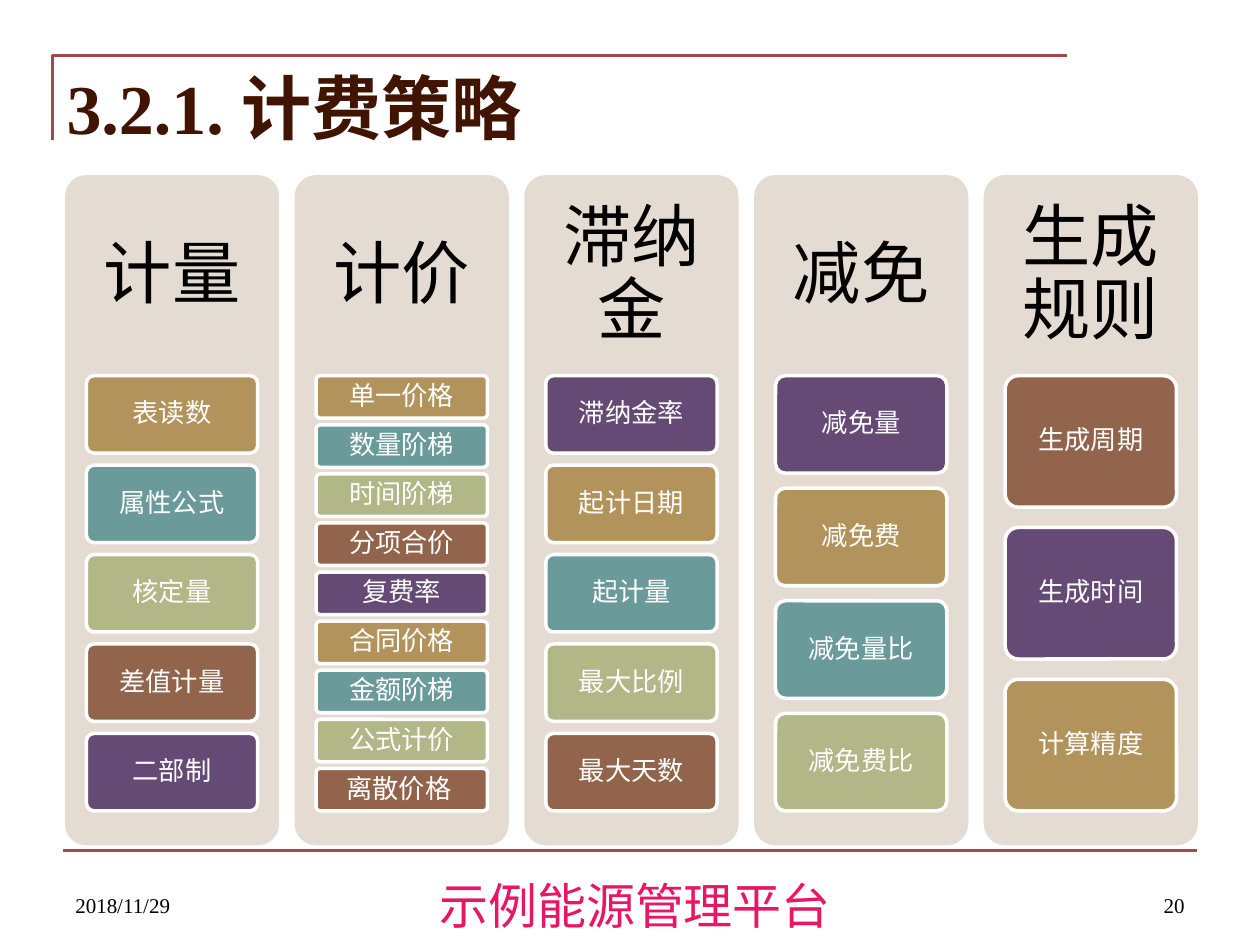
from dataclasses import dataclass
from itertools import cycle
from typing import Iterator

from lxml.etree import SubElement
from pptx import Presentation
from pptx.dml.color import RGBColor
from pptx.enum.shapes import MSO_CONNECTOR, MSO_SHAPE
from pptx.enum.text import MSO_ANCHOR, PP_ALIGN
from pptx.oxml.ns import qn
from pptx.util import Inches, Pt

WIDTH, HEIGHT = Inches(10), Inches(7.5)
CJK_FONT = "Noto Sans CJK SC"
COLORS = {
    "rule": "A24A48", "title": "411401", "footer": "E81766", "panel": "E4DCD2",
    "black": "000000", "white": "FFFFFF", "gold": "B2935C", "teal": "6A9A9A",
    "olive": "B2B787", "brown": "91644B", "purple": "654A76",
}
CARD_COLORS = ("gold", "teal", "olive", "brown", "purple")

# Grid of panels and cards, in percent of the slide's width or height
PANEL_LEFT, PANEL_PITCH, PANEL_WIDTH = 5.16, 18.23, 17
PANEL_TOP, PANEL_HEIGHT, HEADER_HEIGHT = 18.53, 70.93, 21.33
CARDS_TOP, CARDS_HEIGHT, CARD_WIDTH = 39.76, 46.05, 13.6
GAP_PER_CARD = 2 / 13


@dataclass(frozen=True)
class Frame:
    """A rectangle in percent of the slide's size."""
    left: float
    top: float
    width: float
    height: float

    def lengths(self) -> tuple[int, int, int, int]:
        return across(self.left), down(self.top), across(self.width), down(self.height)


@dataclass(frozen=True)
class TextStyle:
    size: int
    color: str
    font: str = "Arial"
    bold: bool = False
    align: PP_ALIGN = PP_ALIGN.CENTER
    anchor: MSO_ANCHOR = MSO_ANCHOR.MIDDLE
    line_spacing: float = 1.0
    wrap: bool = True
    insets: tuple[float, float, float, float] = (7.2, 3.6, 7.2, 3.6)


@dataclass(frozen=True)
class Label:
    text: str
    frame: Frame
    style: TextStyle


@dataclass(frozen=True)
class Strategy:
    name: str
    items: tuple[str, ...]


STRATEGIES = (
    Strategy("计量", ("表读数", "属性公式", "核定量", "差值计量", "二部制")),
    Strategy("计价", ("单一价格", "数量阶梯", "时间阶梯", "分项合价", "复费率",
                    "合同价格", "金额阶梯", "公式计价", "离散价格 ")),
    Strategy("滞纳金", ("滞纳金率", "起计日期", "起计量", "最大比例", "最大天数")),
    Strategy("减免", ("减免量", "减免费", "减免量比", "减免费比")),
    Strategy("生成规则", ("生成周期", "生成时间", "计算精度")),
)
HEADER_STYLE = TextStyle(39, "black", line_spacing=0.9, insets=(11.5, 11.5, 11.5, 11.5))
CARD_STYLE = TextStyle(15, "white", line_spacing=0.9, insets=(3, 2, 3, 2))
LABELS = (
    Label("3.2.1. 计费策略", Frame(4.3, 6.13, 90.8, 10.27),
          TextStyle(40, "title", "Times New Roman", True, PP_ALIGN.LEFT)),
    Label("示例能源管理平台", Frame(33.4, 92.6, 34, 5.2),
          TextStyle(28, "footer", CJK_FONT, anchor=MSO_ANCHOR.TOP, wrap=False,
                    insets=(0, 0, 0, 0))),
    Label("2018/11/29", Frame(5, 91.07, 23.3, 6.67),
          TextStyle(12, "black", "Times New Roman", False, PP_ALIGN.LEFT, MSO_ANCHOR.BOTTOM)),
    Label("20", Frame(71.7, 91.07, 23.3, 6.67),
          TextStyle(12, "black", "Times New Roman", False, PP_ALIGN.RIGHT, MSO_ANCHOR.BOTTOM)),
)


def across(percent: float) -> int:
    return round(WIDTH * percent / 100)


def down(percent: float) -> int:
    return round(HEIGHT * percent / 100)


def rgb(name: str) -> RGBColor:
    return RGBColor.from_string(COLORS[name])


def write_text(shape, text: str, style: TextStyle) -> None:
    text_frame = shape.text_frame
    sides = ("margin_left", "margin_top", "margin_right", "margin_bottom")
    frame_format = dict(zip(sides, map(Pt, style.insets)))
    frame_format |= {"word_wrap": style.wrap, "vertical_anchor": style.anchor}
    for name, value in frame_format.items():
        setattr(text_frame, name, value)
    paragraph = text_frame.paragraphs[0]
    paragraph.alignment = style.align
    paragraph.line_spacing = style.line_spacing
    run = paragraph.add_run()
    run.text = text
    font_format = {"size": Pt(style.size), "name": style.font, "bold": style.bold}
    for name, value in font_format.items():
        setattr(run.font, name, value)
    run.font.color.rgb = rgb(style.color)
    east_asian = SubElement(run.font._element, qn("a:ea"))
    east_asian.set("typeface", CJK_FONT)


def add_label(slide, label: Label) -> None:
    write_text(slide.shapes.add_textbox(*label.frame.lengths()), label.text, label.style)


def add_rounded(slide, frame: Frame, color: str, outline: str | None = None):
    shape = slide.shapes.add_shape(MSO_SHAPE.ROUNDED_RECTANGLE, *frame.lengths())
    shape.adjustments[0] = 0.1
    shape.shadow.inherit = False
    shape.fill.solid()
    shape.fill.fore_color.rgb = rgb(color)
    if outline:
        shape.line.color.rgb = rgb(outline)
        shape.line.width = Pt(2)
    else:
        shape.line.fill.background()
    return shape


def add_strategy(slide, column: int, strategy: Strategy, colors: Iterator[str]) -> None:
    """Draw one panel with its heading and a stack of cards that fills the column."""
    left = PANEL_LEFT + column * PANEL_PITCH
    add_rounded(slide, Frame(left, PANEL_TOP, PANEL_WIDTH, PANEL_HEIGHT), "panel")
    header = Frame(left, PANEL_TOP, PANEL_WIDTH, HEADER_HEIGHT)
    add_label(slide, Label(strategy.name, header, HEADER_STYLE))
    count = len(strategy.items)
    height = CARDS_HEIGHT / (count + (count - 1) * GAP_PER_CARD)
    card_left = left + (PANEL_WIDTH - CARD_WIDTH) / 2
    for row, item in enumerate(strategy.items):
        top = CARDS_TOP + row * height * (1 + GAP_PER_CARD)
        card = add_rounded(slide, Frame(card_left, top, CARD_WIDTH, height), next(colors), "white")
        write_text(card, item, CARD_STYLE)


def style_rule(line) -> None:
    line.color.rgb = rgb("rule")
    line.width = Pt(1.5)


def add_rules(slide) -> None:
    """Draw the corner around the title and the line above the footer."""
    left, top = across(4.15), down(5.87)
    builder = slide.shapes.build_freeform(left, down(14.8))
    builder.add_line_segments([(left, top), (across(84.65), top)], close=False)
    corner = builder.convert_to_shape()
    corner.shadow.inherit = False
    corner.fill.background()
    style_rule(corner.line)
    footer_rule = slide.shapes.add_connector(
        MSO_CONNECTOR.STRAIGHT, across(5), down(90), across(95), down(90))
    style_rule(footer_rule.line)
    SubElement(footer_rule._element.spPr, qn("a:effectLst"))


def main() -> None:
    presentation = Presentation()
    presentation.slide_width, presentation.slide_height = WIDTH, HEIGHT
    slide = presentation.slides.add_slide(presentation.slide_layouts[6])
    add_rules(slide)
    colors = cycle(CARD_COLORS)
    for column, strategy in enumerate(STRATEGIES):
        add_strategy(slide, column, strategy, colors)
    for label in LABELS:
        add_label(slide, label)
    presentation.save("out.pptx")


if __name__ == "__main__":
    main()
